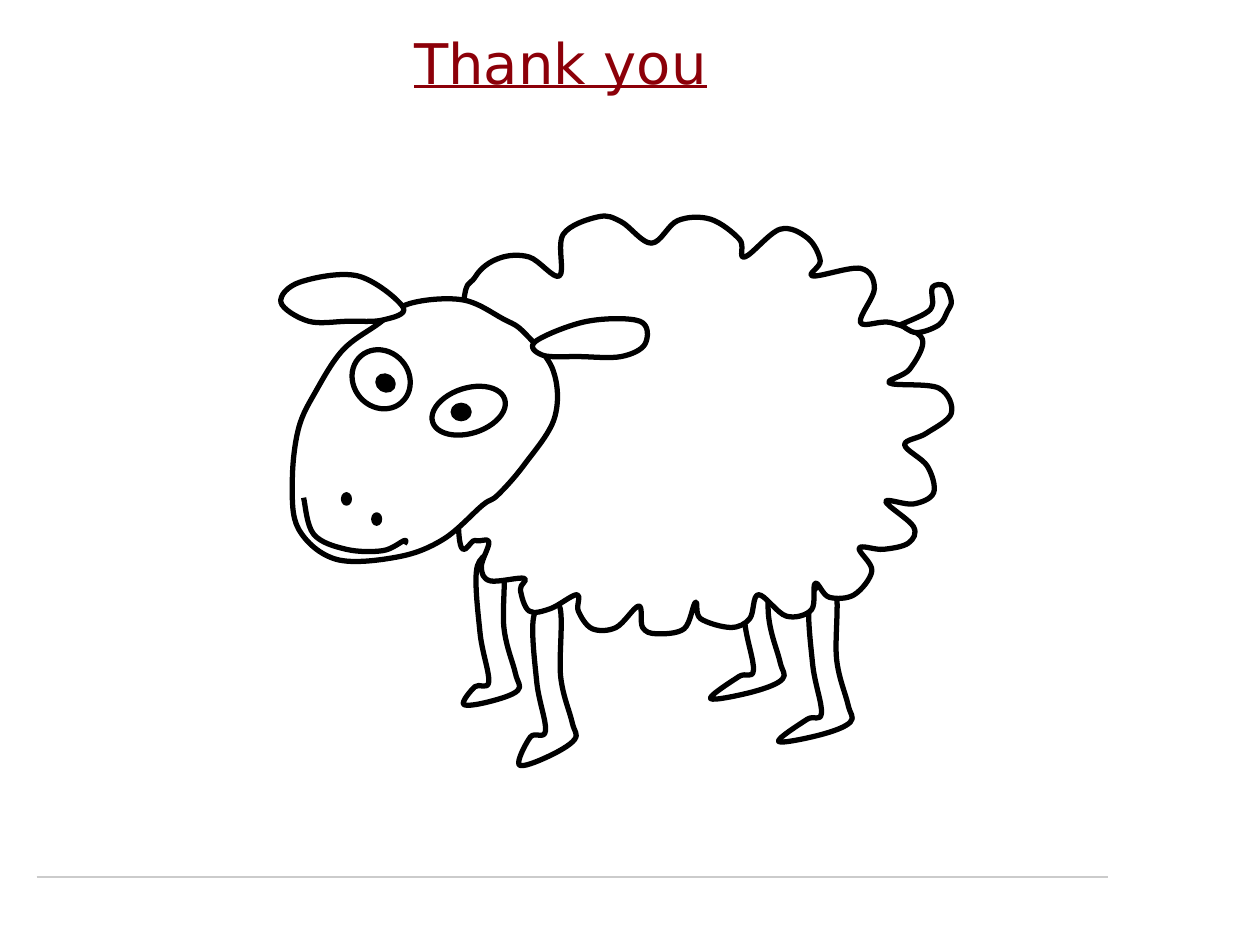
from lxml import etree
from pptx import Presentation
from pptx import util as u
from pptx.dml.color import RGBColor
from pptx.enum import shapes, text
from pptx.oxml.ns import qn

Pt = u.Pt
BLACK = RGBColor(0x00, 0x00, 0x00)
WHITE = RGBColor(0xFF, 0xFF, 0xFF)
RED = RGBColor(0x8C, 0x00, 0x09)
GREY = RGBColor(0xCB, 0xCB, 0xCB)
UNIT = 0.72


def put_text(sp, content, size, color, font="DejaVu Sans", underline=False,
             align=text.PP_ALIGN.CENTER, anchor=text.MSO_ANCHOR.MIDDLE):
    tf = sp.text_frame
    tf.word_wrap = True
    tf.auto_size = text.MSO_AUTO_SIZE.NONE
    tf.vertical_anchor = anchor
    p = tf.paragraphs[0]
    p.alignment = align
    r = p.add_run()
    r.text = content
    r.font.name = font
    r.font.size = Pt(size)
    r.font.underline = underline
    r.font.color.rgb = color


def add_curve(s, pts, closed=True, filled=True):
    pts = [(Pt(x * UNIT), Pt(y * UNIT)) for x, y in pts]
    if closed:
        knots = [pts[-1], *pts, pts[0], pts[1]]
    else:
        knots = [pts[0], *pts, pts[-1]]
    fb = s.shapes.build_freeform(*pts[0])
    fb.add_line_segments(knots[2:-1], close=closed)
    sp = fb.convert_to_shape()
    origin = sp.left, sp.top
    segments = list(sp._element.iter(qn("a:lnTo")))
    for seg, a, b, c, d in zip(segments, knots, knots[1:], knots[2:], knots[3:]):
        seg.tag = qn("a:cubicBezTo")
        handles = ([q + (r - p) / 6 for p, q, r in zip(a, b, c)],
                   [q - (r - p) / 6 for p, q, r in zip(b, c, d)])
        for i, handle in enumerate(handles):
            x, y = [str(round(v - o)) for v, o in zip(handle, origin)]
            seg.insert(i, seg.makeelement(qn("a:pt"), {"x": x, "y": y}))
    sp.shadow.inherit = False
    if filled:
        sp.fill.solid()
        sp.fill.fore_color.rgb = WHITE
    else:
        sp.fill.background()
    sp.line.color.rgb = BLACK
    sp.line.width = Pt(3)


prs = Presentation()
prs.slide_width, prs.slide_height = Pt(720), Pt(540)
s = prs.slides.add_slide(prs.slide_layouts[5])

title = s.shapes.title
title.left, title.top, title.width, title.height = Pt(14.4), Pt(-0.72), Pt(612), Pt(72)
put_text(title, "Thank you", 32, RED, underline=True)

rule = s.shapes.add_connector(shapes.MSO_CONNECTOR.STRAIGHT,
                              Pt(21), Pt(501.1), Pt(633), Pt(501.1))
rule.line.color.rgb = GREY
rule.line.width = Pt(1)
etree.SubElement(rule._element.spPr, qn("a:effectLst"))

shin = [(0, 0), (1, 56), (10, 92), (12, 106)]
calf = [(-11, 99), (-18, 60), (-20, 7)]
long_foot = [(-11, 116), (-45, 121.5), (-22.5, 104)]
legs = [
    (444, 481, [(-10, 120), (-32, 126), (-23, 104)]),
    (399, 442, [(-11, 115), (-31, 117), (-22, 103)]),
    (663, 467, long_foot),
    (609, 433, long_foot),
]
for x, y, foot in legs:
    add_curve(s, [(x + dx, y + dy) for dx, dy in shin + foot + calf])

wool = [
    (367, 252), (377, 220), (396, 205), (420, 204), (444, 219), (447, 186),
    (475, 172), (493, 176), (517, 193), (538, 175), (564, 174), (587, 190),
    (591, 204), (619, 182), (641, 189), (651, 207), (645, 219), (683, 213),
    (694, 229), (683, 256), (707, 256), (732, 269), (722, 293), (706, 304),
    (745, 308), (755, 328), (735, 344), (718, 353), (736, 370), (741, 391),
    (725, 400), (703, 398), (725, 418), (721, 431), (701, 436), (682, 435),
    (692, 453), (678, 472), (658, 474), (647, 463), (644, 484), (624, 489),
    (602, 472), (595, 491), (580, 498), (556, 491), (552, 478), (543, 499),
    (521, 503), (510, 498), (507, 481), (489, 498), (470, 499), (459, 485),
    (458, 472), (437, 483), (420, 485), (413, 468), (416, 459), (389, 461),
    (382, 450), (388, 430), (377, 429), (364, 421),
]
tail = [(714, 258), (734, 249), (740, 242), (740, 228), (750, 227), (755, 239),
        (752, 247), (745, 258), (727, 264), (714, 257)]
head = [
    (367, 238), (325, 241), (299, 258), (272, 278), (251, 310), (237, 340),
    (232, 382), (237, 420), (267, 444), (316, 442), (352, 428), (383, 401),
    (395, 393), (416, 369), (440, 332), (439, 294), (416, 264), (399, 253),
]
right_ear = [(425, 271), (466, 255), (508, 255), (512, 273), (493, 283),
             (460, 283), (431, 282)]
left_ear = [(320, 244), (284, 219), (238, 224), (223, 240), (245, 255),
            (276, 255), (304, 254)]
mouth = [(241, 395), (249, 424), (275, 436), (304, 437), (321, 429), (321, 432)]

add_curve(s, wool)
add_curve(s, tail, closed=False)
for outline in (head, right_ear, left_ear):
    add_curve(s, outline)

ovals = [
    (272, 392, 6, 8, 0, BLACK, 2),
    (296, 408, 6, 8, 0, BLACK, 2),
    (278, 279, 49, 44, 49, WHITE, 3),
    (299, 298, 14, 12, 31.5, BLACK, 2),
    (342, 308, 60, 36, 342.4, WHITE, 3),
    (359, 321, 14, 12, 0, BLACK, 2),
]
for x, y, w, h, angle, color, weight in ovals:
    sp = s.shapes.add_shape(shapes.MSO_SHAPE.OVAL,
                            *[Pt(v * UNIT) for v in (x, y, w, h)])
    sp.rotation = angle
    sp.shadow.inherit = False
    sp.fill.solid()
    sp.fill.fore_color.rgb = color
    sp.line.color.rgb = BLACK
    sp.line.width = Pt(weight)

add_curve(s, mouth, closed=False, filled=False)

prs.save("out.pptx")
